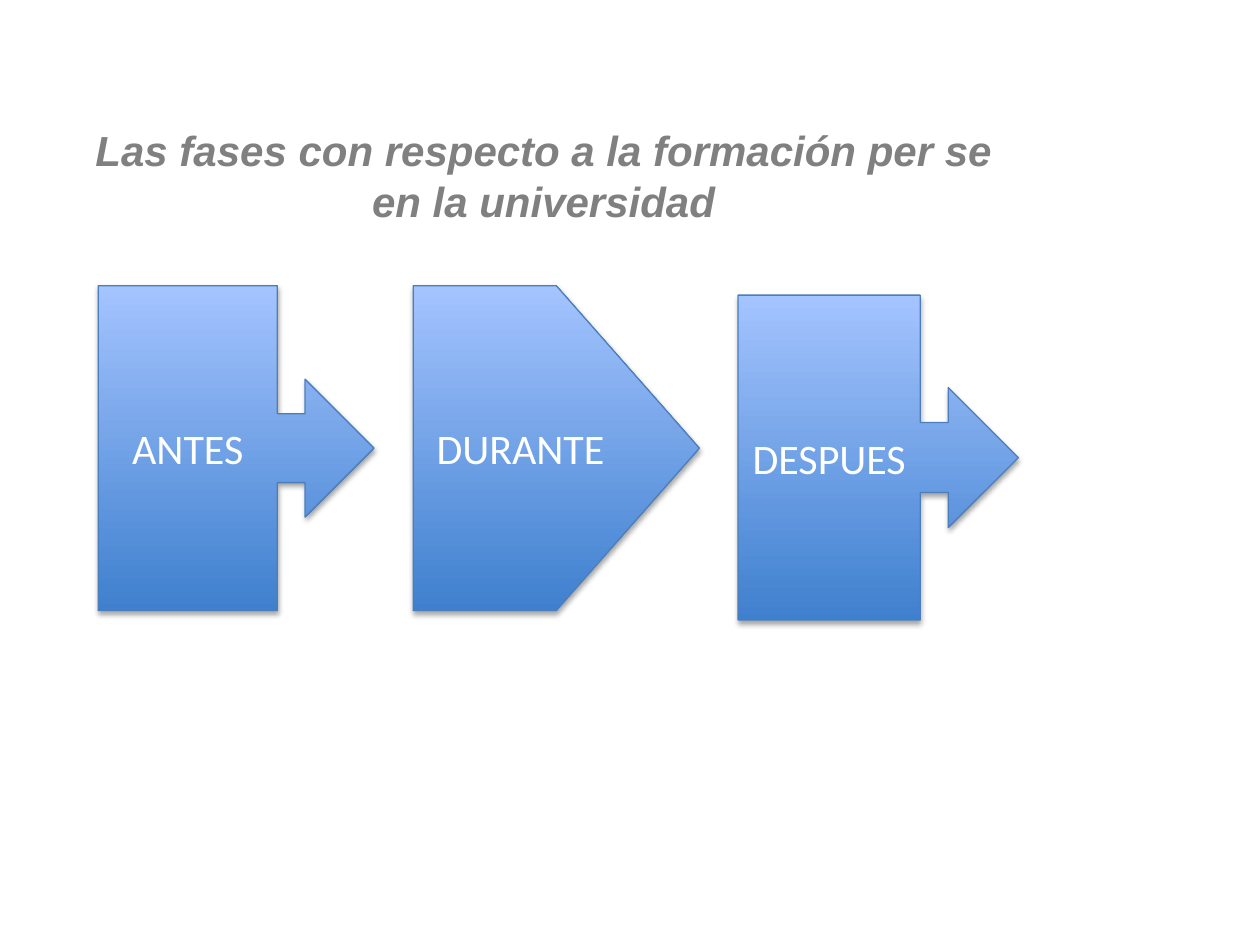
from lxml import etree
from pptx import Presentation
from pptx import util as u
from pptx.dml.color import RGBColor
from pptx.enum import shapes, text
from pptx.oxml import ns

COLORS = {
    "deep": "3F80CE",
    "pale": "A4C4FF",
    "outline": "4B7EBC",
    "title": "808080",
    "label": "FFFFFF",
    "shadow": "000000",
}
PHASE_HEIGHT = 6.55


def rgb(name):
    return RGBColor.from_string(COLORS[name])


def write(frame, words, font="Calibri", size=24, color="label",
          bold=False, italic=False, anchor=text.MSO_ANCHOR.MIDDLE):
    frame.word_wrap = True
    frame.vertical_anchor = anchor
    paragraph = frame.paragraphs[0]
    paragraph.alignment = text.PP_ALIGN.CENTER
    run = paragraph.add_run()
    run.text = words
    run.font.name = font
    run.font.size = u.Pt(size)
    run.font.color.rgb = rgb(color)
    run.font.bold = bold
    run.font.italic = italic


def add_soft_shadow(shape):
    """Cast a faint shadow straight down."""
    shape.shadow.inherit = False
    effects = shape._element.spPr.find(ns.qn("a:effectLst"))
    outer = etree.SubElement(effects, ns.qn("a:outerShdw"), blurRad=str(u.Pt(3.1)),
                             dist=str(u.Pt(1.8)), dir="5400000", rotWithShape="0")
    tone = etree.SubElement(outer, ns.qn("a:srgbClr"), val=COLORS["shadow"])
    etree.SubElement(tone, ns.qn("a:alpha"), val="35000")


def add_phase(slide, kind, label, left, top, width):
    phase = slide.shapes.add_shape(kind, u.Cm(left), u.Cm(top),
                                   u.Cm(width), u.Cm(PHASE_HEIGHT))
    phase.fill.gradient()
    phase.fill.gradient_angle = 90
    for stop, color in zip(phase.fill.gradient_stops, ("deep", "pale")):
        stop.color.rgb = rgb(color)
    phase.line.color.rgb = rgb("outline")
    phase.line.width = u.Pt(0.75)
    add_soft_shadow(phase)
    write(phase.text_frame, label)


def add_title(slide, words):
    title = slide.shapes.add_textbox(u.Cm(1.27), u.Cm(2.39), u.Cm(19.38), u.Cm(2.31))
    write(title.text_frame, words, font="Arial", color="title",
          bold=True, italic=True, anchor=text.MSO_ANCHOR.TOP)
    title.text_frame.auto_size = text.MSO_AUTO_SIZE.SHAPE_TO_FIT_TEXT


def main():
    deck = Presentation()
    deck.slide_width, deck.slide_height = u.Cm(25.4), u.Cm(19.05)
    slide = deck.slides.add_slide(deck.slide_layouts[6])

    callout = shapes.MSO_SHAPE.RIGHT_ARROW_CALLOUT
    pentagon = shapes.MSO_SHAPE.PENTAGON
    for phase in (
        (pentagon, "DURANTE", 8.33, 5.76, 5.77),
        (callout, "ANTES", 1.98, 5.76, 5.56),
        (callout, "DESPUES", 14.88, 5.95, 5.65),
    ):
        add_phase(slide, *phase)
    add_title(slide, "Las fases con respecto a la formación per se en la universidad")

    deck.save("out.pptx")


if __name__ == "__main__":
    main()
